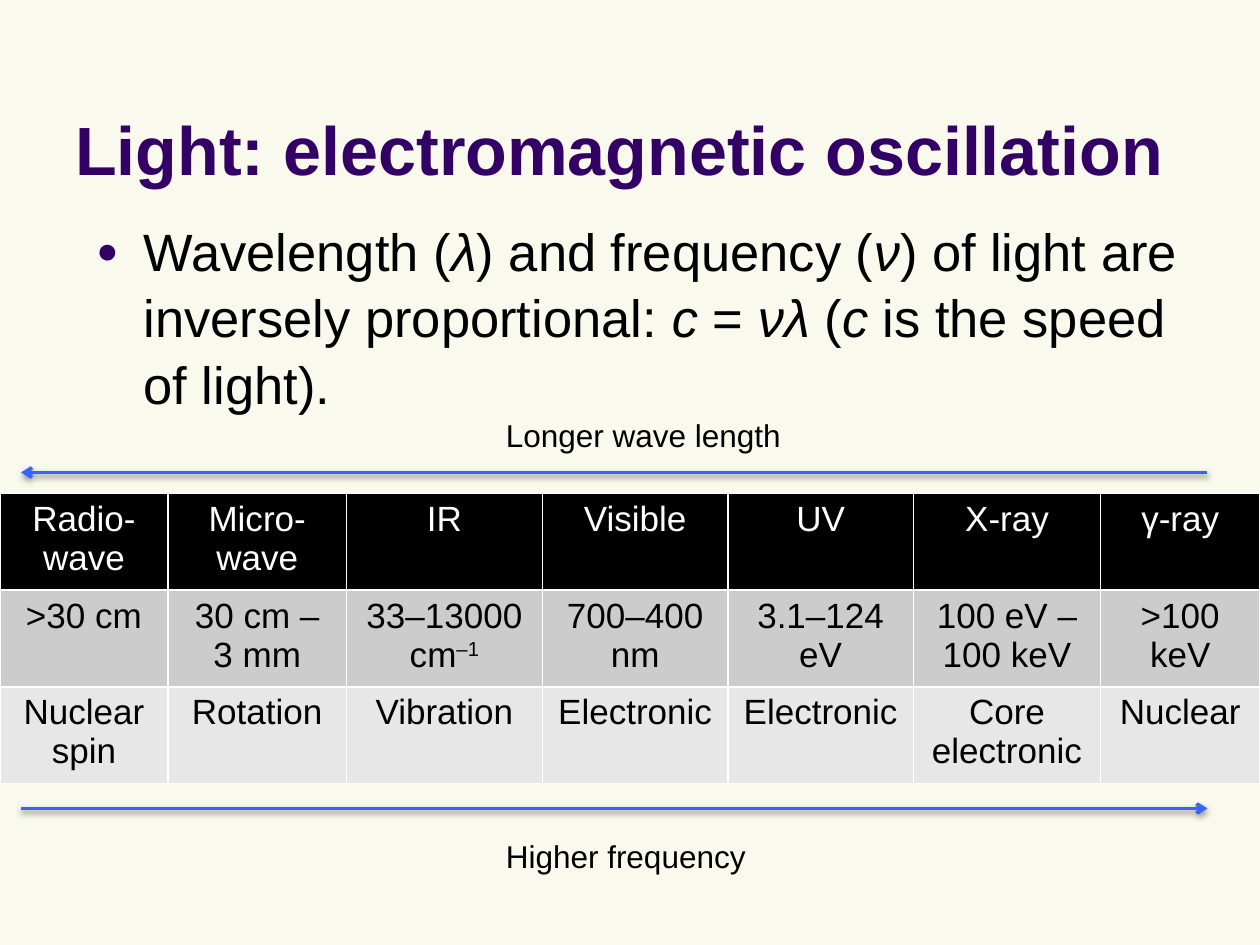
from dataclasses import dataclass

from lxml.etree import SubElement
from pptx import Presentation
from pptx.dml.color import RGBColor
from pptx.enum.shapes import MSO_CONNECTOR
from pptx.enum.text import MSO_ANCHOR, PP_ALIGN
from pptx.oxml.ns import qn
from pptx.util import Pt

COLORS = {
    "background": "F9F9EE",
    "title": "330066",
    "text": "000000",
    "white": "FFFFFF",
    "arrow": "3366FF",
    "header": "000000",
    "range": "CCCCCC",
    "transition": "E7E7E7",
}
FONT = "Arial"


@dataclass
class Phrase:
    text: str
    italic: bool = False
    superscript: bool = False


@dataclass
class TextBox:
    left: float
    top: float
    width: float
    height: float
    size: float
    phrases: list[Phrase]
    color: str = "text"
    bold: bool = False
    wrap: bool = True
    anchor: MSO_ANCHOR = MSO_ANCHOR.TOP


@dataclass
class Arrow:
    y: float
    end: str  # headEnd points left, tailEnd points right


@dataclass
class TableRow:
    fill: str
    color: str
    cells: list[list[Phrase]]


def rgb(name: str) -> RGBColor:
    return RGBColor.from_string(COLORS[name])


def plain(*texts: str) -> list[list[Phrase]]:
    return [[Phrase(text)] for text in texts]


def write_paragraph(paragraph, phrases: list[Phrase], size: float, color: str,
                    bold: bool = False) -> None:
    font = paragraph.font
    font.name, font.size, font.bold = FONT, Pt(size), bold
    font.color.rgb = rgb(color)
    for phrase in phrases:
        for index, line in enumerate(phrase.text.split("\n")):
            if index:
                paragraph.add_line_break()
            run = paragraph.add_run()
            run.text = line
            if phrase.italic:
                run.font.italic = True
            if phrase.superscript:
                run._r.get_or_add_rPr().set("baseline", "30000")


def add_text(slide, box: TextBox):
    shape = slide.shapes.add_textbox(Pt(box.left), Pt(box.top), Pt(box.width), Pt(box.height))
    frame = shape.text_frame
    frame.word_wrap = box.wrap
    frame.vertical_anchor = box.anchor
    write_paragraph(frame.paragraphs[0], box.phrases, box.size, box.color, box.bold)
    return frame.paragraphs[0]


def add_bullet(paragraph, indent: float) -> None:
    properties = paragraph._p.get_or_add_pPr()
    properties.set("marL", str(Pt(indent)))
    properties.set("indent", str(-Pt(indent)))
    bullet_color = SubElement(properties, qn("a:buClr"))
    SubElement(bullet_color, qn("a:srgbClr"), val=COLORS["title"])
    SubElement(properties, qn("a:buSzPct"), val="70000")
    SubElement(properties, qn("a:buFont"), typeface=FONT)
    SubElement(properties, qn("a:buChar"), char="●")
    # Default run properties come after the bullet in the schema
    properties.append(properties.find(qn("a:defRPr")))


def add_arrow(slide, arrow: Arrow) -> None:
    connector = slide.shapes.add_connector(
        MSO_CONNECTOR.STRAIGHT, Pt(12), Pt(arrow.y), Pt(690), Pt(arrow.y))
    connector.line.color.rgb = rgb("arrow")
    connector.line.width = Pt(2)
    SubElement(connector.line._get_or_add_ln(), qn(f"a:{arrow.end}"), type="arrow")
    # Soft shadow below the line
    effects = SubElement(connector._element.spPr, qn("a:effectLst"))
    shadow = SubElement(effects, qn("a:outerShdw"), blurRad=str(Pt(3.1)),
                        dist=str(Pt(1.6)), dir="5400000", rotWithShape="0")
    shadow_color = SubElement(shadow, qn("a:srgbClr"), val=COLORS["text"])
    SubElement(shadow_color, qn("a:alpha"), val="38000")


def add_borders(cell) -> None:
    properties = cell._tc.get_or_add_tcPr()
    for side in ("lnL", "lnR", "lnT", "lnB"):
        line = SubElement(properties, qn(f"a:{side}"), w=str(Pt(1)))
        fill = SubElement(line, qn("a:solidFill"))
        SubElement(fill, qn("a:srgbClr"), val=COLORS["white"])


def add_spectrum_table(slide, top: float, widths: list[float], row_height: float,
                       rows: list[TableRow]) -> None:
    table = slide.shapes.add_table(
        len(rows), len(widths), Pt(0), Pt(top),
        Pt(sum(widths)), Pt(row_height * len(rows))).table
    table.horz_banding = False
    for column, width in zip(table.columns, widths):
        column.width = Pt(width)
    for table_row, row in zip(table.rows, rows):
        table_row.height = Pt(row_height)
        for cell, phrases in zip(table_row.cells, row.cells):
            add_borders(cell)
            cell.fill.solid()
            cell.fill.fore_color.rgb = rgb(row.fill)
            paragraph = cell.text_frame.paragraphs[0]
            paragraph.alignment = PP_ALIGN.CENTER
            write_paragraph(paragraph, phrases, 20, row.color)


TITLE = TextBox(36, 9.5, 648, 102, 39, [Phrase("Light: electromagnetic oscillation")],
                color="title", bold=True, anchor=MSO_ANCHOR.BOTTOM)
BODY = TextBox(48, 120, 636, 201, 30, [
    Phrase("Wavelength ("), Phrase("λ", italic=True),
    Phrase(") and frequency ("), Phrase("ν", italic=True),
    Phrase(") of light are inversely proportional: "), Phrase("c", italic=True),
    Phrase(" = "), Phrase("νλ", italic=True),
    Phrase(" ("), Phrase("c", italic=True), Phrase(" is the speed of light)."),
])
LABELS = [
    TextBox(282, 234, 174, 29, 18, [Phrase("Longer wave length")], wrap=False),
    TextBox(282, 475, 153, 29, 18, [Phrase("Higher frequency")], wrap=False),
]
ARROWS = [Arrow(270, "headEnd"), Arrow(462, "tailEnd")]
COLUMN_WIDTHS = [96, 102, 112, 106, 106, 107, 91]
ROWS = [
    TableRow("header", "white", plain(
        "Radio-wave", "Micro-wave", "IR", "Visible", "UV", "X-ray", "γ-ray")),
    TableRow("range", "text", [
        *plain(">30 cm", "30 cm –\n3 mm"),
        [Phrase("33–13000 cm"), Phrase("–1", superscript=True)],
        *plain("700–400 nm", "3.1–124 eV", "100 eV –\n100 keV", ">100 keV")]),
    TableRow("transition", "text", plain(
        "Nuclear spin", "Rotation", "Vibration", "Electronic", "Electronic",
        "Core electronic", "Nuclear")),
]


def main() -> None:
    presentation = Presentation()
    presentation.slide_width, presentation.slide_height = Pt(720), Pt(540)
    slide = presentation.slides.add_slide(presentation.slide_layouts[6])
    slide.background.fill.solid()
    slide.background.fill.fore_color.rgb = rgb("background")

    # Title and bulleted statement
    add_text(slide, TITLE)
    statement = add_text(slide, BODY)
    statement.line_spacing = 1.05
    add_bullet(statement, 27)

    # Spectrum table with its arrows and labels
    add_spectrum_table(slide, 282, COLUMN_WIDTHS, 52, ROWS)
    for arrow in ARROWS:
        add_arrow(slide, arrow)
    for label in LABELS:
        add_text(slide, label)

    presentation.save("out.pptx")


if __name__ == "__main__":
    main()
